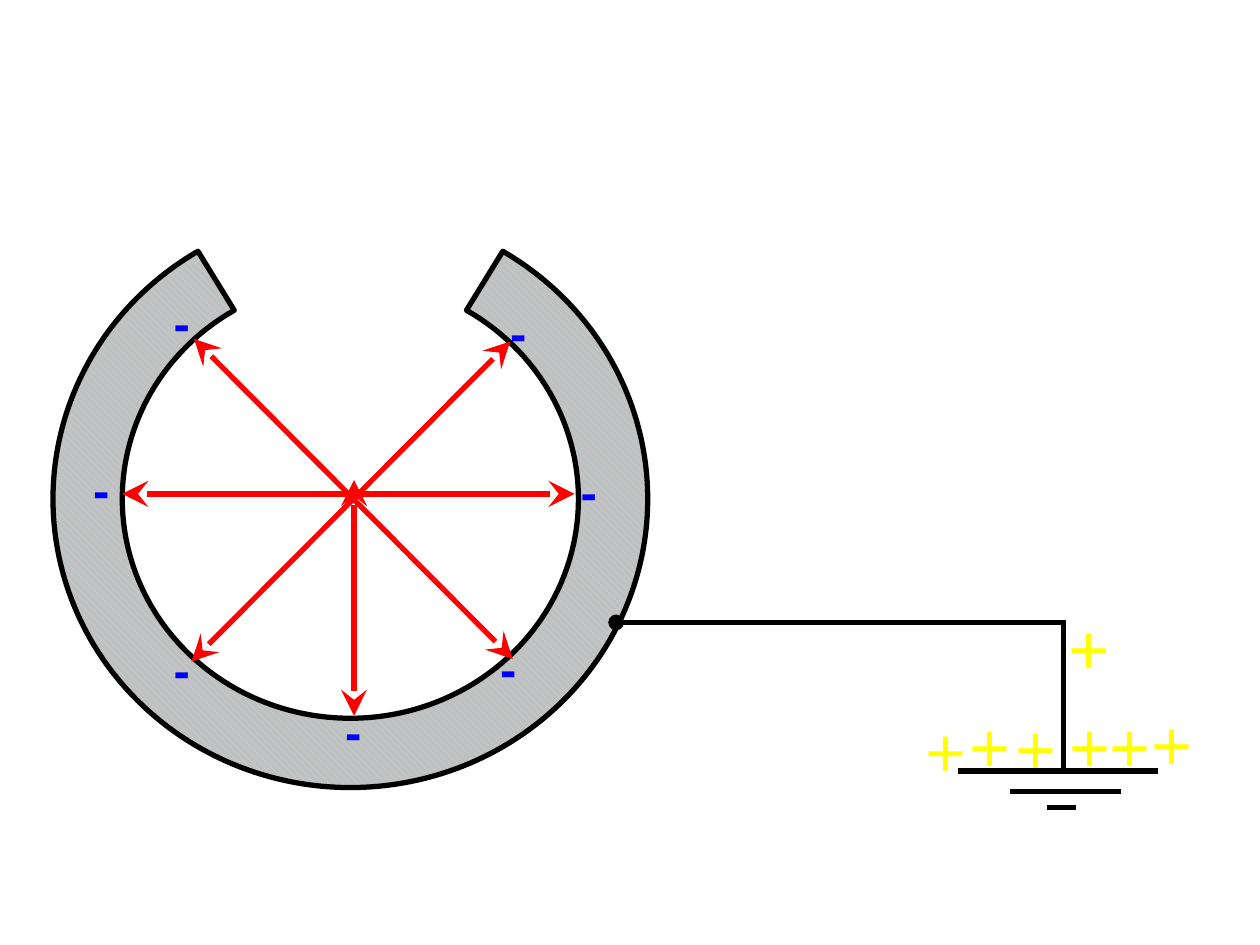
from lxml.etree import SubElement as Sub
from pptx import Presentation
from pptx.dml.color import RGBColor
from pptx.enum.dml import MSO_PATTERN as Pattern
from pptx.enum.shapes import MSO_CONNECTOR as Link, MSO_SHAPE as Shape
from pptx.enum.text import MSO_AUTO_SIZE as Fit
from pptx.oxml.ns import qn
from pptx.util import Inches, Pt


def tint(code):
    return RGBColor.from_string(code)


class Board:
    """Draws on one slide laid out as a grid of 100 columns and 75 rows."""

    face, ink, red, blue, gold = "Arial", "000000", "FF0000", "0000FF", "FFFF00"

    def __init__(self):
        self.deck = Presentation()
        self.deck.slide_width, self.deck.slide_height = Inches(10), Inches(7.5)
        self.slide = self.deck.slides.add_slide(self.deck.slide_layouts[6])
        self.unit = self.deck.slide_width / 100

    def grid(self, *cells):
        return [round(cell * self.unit) for cell in cells]

    def group(self):
        return self.slide.shapes.add_group_shape().shapes

    def pen(self, line, color):
        line.width = Pt(3)
        line.color.rgb = tint(color)

    def ring(self, left, top, wide, high, thick, gap):
        arc = self.slide.shapes.add_shape(Shape.BLOCK_ARC, *self.grid(left, top, wide, high))
        arc.shadow.inherit = False
        arc.rotation = 180
        arc.adjustments[0] = (90 + gap / 2) * 0.6
        arc.adjustments[1] = (90 - gap / 2) * 0.6
        arc.adjustments[2] = thick / min(wide, high)
        arc.fill.patterned()
        arc.fill.pattern = Pattern.WIDE_DOWNWARD_DIAGONAL
        arc.fill.fore_color.rgb = tint("BBE0E3")
        arc.fill.back_color.rgb = tint("C0C0C0")
        self.pen(arc.line, self.ink)

    def wire(self, home, ends, color, tips=None, size="med"):
        line = home.add_connector(Link.STRAIGHT, *self.grid(*ends))
        self.pen(line.line, color)
        props = line._element.spPr
        for end, tip in (tips or {}).items():
            Sub(props.find(qn("a:ln")), qn(f"a:{end}"), type=tip, w=size, len=size)
        Sub(props, qn("a:effectLst"))

    def sign(self, home, text, spot, box, size, color, bold=False, shade=False):
        frame = home.add_textbox(*self.grid(*spot, *box)).text_frame
        frame.word_wrap = True
        frame.auto_size = Fit.SHAPE_TO_FIT_TEXT
        para = frame.paragraphs[0]
        run = para.add_run()
        run.text = text
        font = para.font
        font.name, font.size, font.bold = self.face, Pt(size), bold
        font.color.rgb = tint(color)
        if shade:
            glow = Sub(run._r.get_or_add_rPr(), qn("a:effectLst"))
            drop = Sub(glow, qn("a:outerShdw"), dist="35921", dir="2700000")
            Sub(drop, qn("a:srgbClr"), val=self.ink)


def main():
    board = Board()
    board.ring(4.2, 16.7, 47.2, 45.8, thick=5.5, gap=63.2)

    minus = board.group()
    for spot in ((6.4, 36), (12.8, 22.7), (12.8, 50.3), (26.4, 55.2),
                 (38.7, 50.2), (39.5, 23.5), (45.1, 36.1)):
        board.sign(minus, "-", spot, (4.2, 5.7), 28, board.blue, bold=True)

    rays = board.group()
    both = {"headEnd": "stealth", "tailEnd": "stealth"}
    for ends in ((15.4, 26.9, 40.7, 52.3), (9.7, 39.2, 45.6, 39.2),
                 (28.1, 56.8, 28.1, 38.1), (40.5, 27.1, 15.2, 52.5)):
        board.wire(rays, ends, board.red, both, "lg")

    page = board.slide.shapes
    board.wire(page, (48.9, 49.4, 84.2, 49.4), board.ink, {"headEnd": "oval"})
    board.wire(page, (84.4, 61.2, 84.4, 49.2), board.ink)
    for left, right, row in ((76, 91.9, 61.2), (80.2, 89, 62.8), (83.1, 85.4, 64.1)):
        board.wire(page, (left, row, right, row), board.ink)

    plus = board.group()
    for spot in ((76, 55.3), (90.4, 55.1), (83.9, 55.3), (87.1, 55.3),
                 (79.6, 55.4), (83.8, 47.5), (72.5, 55.7)):
        board.sign(plus, "+", spot, (6.7, 7.7), 40, board.gold, shade=True)

    board.deck.save("out.pptx")


if __name__ == "__main__":
    main()
